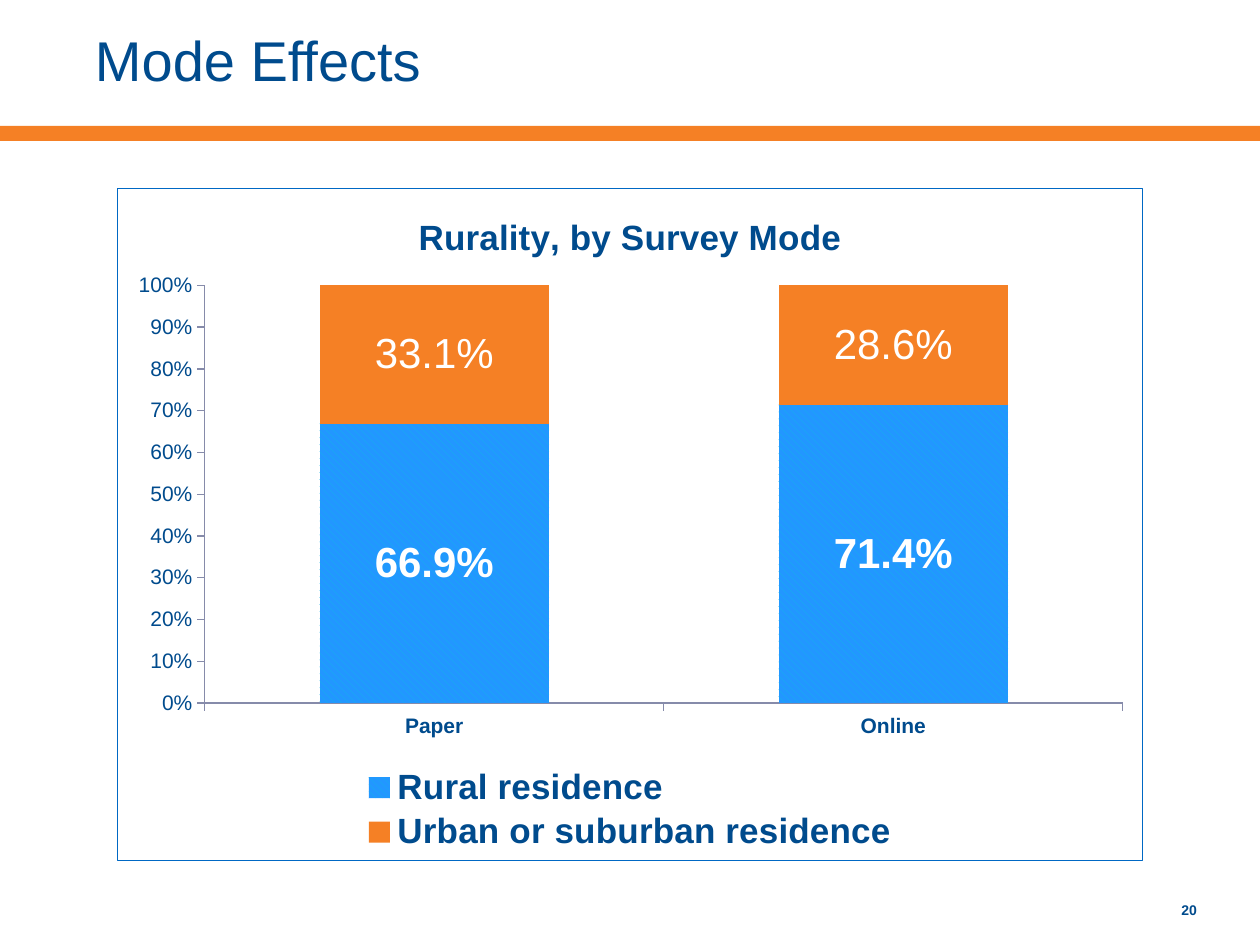
from lxml import etree
from pptx import Presentation
from pptx.chart.data import CategoryChartData
from pptx.dml.color import RGBColor
from pptx.enum.chart import XL_CHART_TYPE as ChartType, XL_LABEL_POSITION as LabelPos
from pptx.enum.chart import XL_LEGEND_POSITION as LegendPos, XL_TICK_MARK as TickMark
from pptx.enum.dml import MSO_PATTERN as Pattern
from pptx.enum.shapes import MSO_SHAPE as Shape
from pptx.enum.text import MSO_ANCHOR as Anchor, PP_ALIGN as Align
from pptx.oxml import parse_xml
from pptx.oxml.ns import nsdecls, qn
from pptx.util import Emu, Pt

PX = 914400 / 126
COLORS = {name: RGBColor.from_string(value) for name, value in {
    "navy": "004B8D", "orange": "F58025", "blue": "2297FF", "cyan": "13B5EA",
    "border": "0068C4", "axis": "868BAA", "white": "FFFFFF"}.items()}


def box(*lengths):
    return [Emu(round(length * PX)) for length in lengths]


def style(font, size, color="navy", bold=False):
    font.name = "Arial"
    font.size = Pt(size)
    font.bold = bold
    font.color.rgb = COLORS[color]


deck = Presentation()
deck.slide_width, deck.slide_height = box(1260, 945)
slide = deck.slides.add_slide(deck.slide_layouts[5])

# Orange band and heading
band = slide.shapes.add_shape(Shape.RECTANGLE, *box(0, 126, 1260, 15))
band.shadow.inherit = False
band.fill.solid()
band.fill.fore_color.rgb = COLORS["orange"]
band.line.fill.background()

heading = slide.shapes.title
heading.left, heading.top, heading.width, heading.height = box(95, 0, 1102, 126)
heading_frame = heading.text_frame
heading_frame.text = "Mode Effects"
heading_frame.margin_left = 0
heading_frame.vertical_anchor = Anchor.MIDDLE
heading_line = heading_frame.paragraphs[0]
heading_line.alignment = Align.LEFT
heading_line.line_spacing = 0.9
style(heading_line.runs[0].font, 32)

# Rurality chart
rurality = CategoryChartData(number_format="0.0%")
rurality.categories = ["Paper", "Online"]
rurality.add_series("Rural residence", (0.669, 0.714))
rurality.add_series("Urban or suburban residence", (0.331, 0.286))
chart = slide.shapes.add_chart(
    ChartType.COLUMN_STACKED_100, *box(117, 188, 1026, 673), rurality).chart
style(chart.font, 10)

chart.has_title = True
chart_title = chart.chart_title.text_frame
chart_title.text = "Rurality, by Survey Mode"
style(chart_title.paragraphs[0].runs[0].font, 20, bold=True)

chart.has_legend = True
chart.legend.position = LegendPos.BOTTOM
chart.legend.include_in_layout = False
style(chart.legend.font, 20, bold=True)

for axis, bold in ((chart.category_axis, True), (chart.value_axis, False)):
    axis.has_major_gridlines = False
    axis.major_tick_mark = TickMark.OUTSIDE
    axis.minor_tick_mark = TickMark.NONE
    axis.format.line.color.rgb = COLORS["axis"]
    style(axis.tick_labels.font, 12, bold=bold)
chart.value_axis.maximum_scale = 1
chart.value_axis.minimum_scale = 0
chart.value_axis.major_unit = 0.1
chart.value_axis.tick_labels.number_format = "0%"
chart.value_axis.tick_labels.number_format_is_linked = False

plot = chart.plots[0]
plot.gap_width = 100
plot.overlap = 100
plot.vary_by_categories = False
rural, urban = plot.series
rural.format.fill.patterned()
rural.format.fill.pattern = Pattern.WIDE_DOWNWARD_DIAGONAL
rural.format.fill.fore_color.rgb = COLORS["cyan"]
rural.format.fill.back_color.rgb = COLORS["blue"]
urban.format.fill.solid()
urban.format.fill.fore_color.rgb = COLORS["orange"]
for series, bold in ((rural, True), (urban, False)):
    labels = series.data_labels
    labels.show_value = True
    labels.number_format = "0.0%"
    labels.number_format_is_linked = False
    labels.position = LabelPos.CENTER
    style(labels.font, 24, "white", bold)

# Chart border, and fixed places for the plot area and the legend
chart_space = chart.element
chart_space.find(qn("c:chart")).addnext(parse_xml(
    f'<c:spPr {nsdecls("c", "a")}><a:noFill/><a:ln w="9525"><a:solidFill>'
    f'<a:srgbClr val="{COLORS["border"]}"/></a:solidFill></a:ln></c:spPr>'))

plot_area = chart_space.find(".//" + qn("c:plotArea"))
legend = chart_space.find(".//" + qn("c:legend"))
for part, target, fractions in (
        (plot_area, "inner", (0.085, 0.144, 0.896, 0.622)),
        (legend, None, (0.24, 0.855, 0.52, 0.14))):
    for old_layout in part.findall(qn("c:layout")):
        part.remove(old_layout)
    layout = etree.Element(qn("c:layout"))
    manual = etree.SubElement(layout, qn("c:manualLayout"))
    settings = [("layoutTarget", target)] if target else []
    settings += [("xMode", "edge"), ("yMode", "edge"), *zip("xywh", fractions)]
    for tag, value in settings:
        etree.SubElement(manual, qn(f"c:{tag}")).set("val", str(value))
    if part is plot_area:
        part.insert(0, layout)
    else:
        part.find(qn("c:legendPos")).addnext(layout)

# Page number
page_frame = slide.shapes.add_textbox(*box(903, 895, 294, 50)).text_frame
page_frame.word_wrap = True
page_frame.margin_right = 0
page_frame.text = "20"
page_frame.paragraphs[0].alignment = Align.RIGHT
style(page_frame.paragraphs[0].runs[0].font, 8, bold=True)

deck.save("out.pptx")
